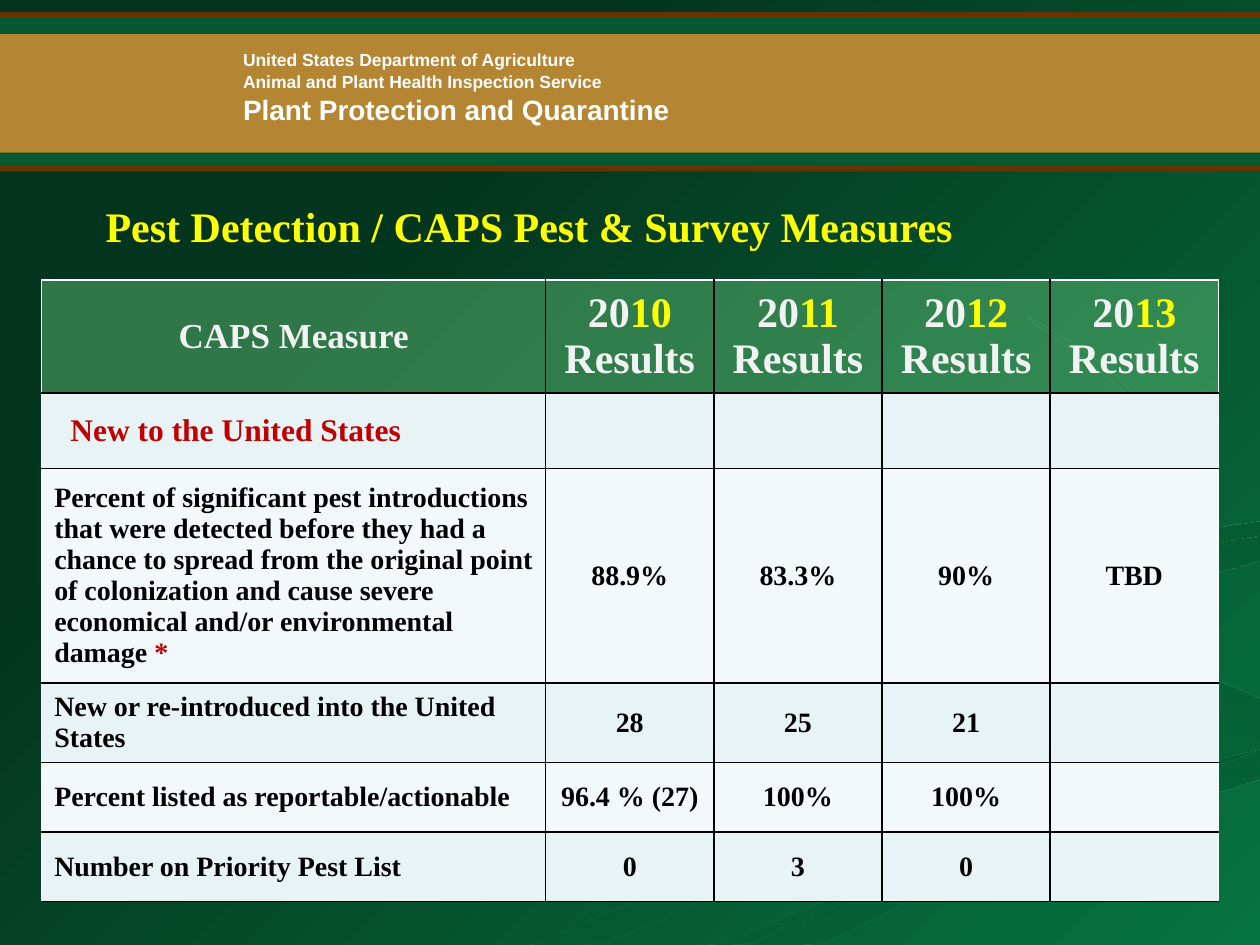
from lxml import etree
from pptx import Presentation
from pptx import util as u
from pptx.dml import color
from pptx.enum import shapes, text
from pptx.oxml import ns

Cm, Pt = u.Cm, u.Pt
GREEN, YELLOW, RED, BLACK, WHITE = "055730", "FFFF00", "C00000", "000000", "FFFFFF"
PALE = "F2F2F2"
CENTER = text.PP_ALIGN.CENTER

# Points that the background swirls curve through, in cm
SWIRLS = [
    [(20.9, 14.4), (17.7, 13.2), (16.6, 12.2), (17.8, 13.1), (20.9, 14.5),
     (17.5, 16.2), (10.9, 19), (12.2, 19), (17, 16.8), (21.2, 15.2)],
    [(24.2, 14.8), (21.9, 13.6), (19.7, 12.3), (21.6, 13.9), (23.7, 15.1), (23.2, 15.6)],
    [(15.2, 19), (16.6, 19), (20.3, 17.2), (25.4, 15.7), (25.4, 15.1), (20.5, 16.6)],
    [(19.7, 12.3), (24, 14.4), (22.2, 15.8), (14.6, 19), (15.2, 19), (20.5, 16.6),
     (25.4, 15.1), (25.4, 14.1), (20.9, 12.2), (25.4, 10.8), (25.4, 10.5), (20.7, 11.4)],
    [(20.9, 12.2), (21.8, 13), (21.5, 12.3), (25.4, 11.3), (25.4, 10.8), (21.5, 11.7)],
    [(19, 11.3), (23.1, 9.8), (22.8, 7.9), (20.7, 6.4), (23.2, 8.5), (22.3, 9.9),
     (17.5, 11.3), (17.7, 13), (17.1, 12)],
]

COLUMNS = [10.16] + [3.39] * 4
ROWS = [1.27, 1.52, 3.3] + [1.4] * 3
MEASURES = [
    ["New or re-introduced into the United States", "28", "25", "21", ""],
    ["Percent listed as reportable/actionable", "96.4 % (27)", "100%", "100%", ""],
    ["Number on Priority Pest List", "0", "3", "0", ""],
]
SPREAD = ("Percent of significant pest introductions that were detected before they had a "
          "chance to spread from the original point of colonization and cause severe "
          "economical and/or environmental damage ")


def rgb(value):
    return color.RGBColor.from_string(value)


def set_alpha(element, percents):
    """Give each colour below element its opacity, in order."""
    for clr, percent in zip(element.iter(ns.qn("a:srgbClr")), percents):
        etree.SubElement(clr, ns.qn("a:alpha"), val=str(percent * 1000))


def smooth(points, steps=6):
    """Return a closed Catmull-Rom curve through the points."""
    curve = []
    for i in range(len(points)):
        a, b, c, d = (points[(i + k) % len(points)] for k in range(-1, 3))
        for t in (step / steps for step in range(steps)):
            curve.append(tuple(
                q + t * ((r - p) + t * ((2 * p - 5 * q + 4 * r - s)
                                        + t * (3 * q - p - 3 * r + s))) / 2
                for p, q, r, s in zip(a, b, c, d)))
    return curve


def add_run(p, content, font="Times New Roman", size=16, fill=BLACK, bold=True):
    r = p.add_run()
    r.text = content
    r.font.name, r.font.size, r.font.bold = font, Pt(size), bold
    r.font.color.rgb = rgb(fill)


def set_gradient(fill, first, last, start, angle):
    fill.gradient()
    fill.gradient_angle = 360 - angle
    for stop, value, position in zip(fill.gradient_stops, (first, last), (start, 1)):
        stop.color.rgb, stop.position = rgb(value), position


class Deck:
    def __init__(self):
        self.prs = Presentation()
        self.prs.slide_width, self.prs.slide_height = Cm(25.4), Cm(19.05)
        self.s = self.prs.slides.add_slide(self.prs.slide_layouts[6])
        set_gradient(self.s.background.fill, "03341D", "077340", 0.26, 45)

    def band(self, top, height, fill, alpha=100):
        sp = self.s.shapes.add_shape(shapes.MSO_SHAPE.RECTANGLE, 0, Cm(top),
                                     Cm(25.4), Cm(height))
        sp.shadow.inherit = False
        sp.line.fill.background()
        sp.fill.solid()
        sp.fill.fore_color.rgb = rgb(fill)
        set_alpha(sp._element.spPr, [alpha])

    def rule(self, y):
        line = self.s.shapes.add_connector(shapes.MSO_CONNECTOR.STRAIGHT,
                                           0, Cm(y), Cm(25.4), Cm(y))
        line.line.color.rgb, line.line.width = rgb("663300"), Pt(3)
        etree.SubElement(line._element.spPr, ns.qn("a:effectLst"))

    def swirl(self, points):
        curve = [(Cm(min(x, 25.4)), Cm(min(y, 19.05))) for x, y in smooth(points)]
        builder = self.s.shapes.build_freeform(*curve[0])
        builder.add_line_segments(curve[1:], close=True)
        sp = builder.convert_to_shape()
        sp.shadow.inherit = False
        sp.line.fill.background()
        set_gradient(sp.fill, "035930", GREEN, 0, 90)
        set_alpha(sp._element.spPr, [59, 20])

    def textbox(self, left, top, width, height):
        tf = self.s.shapes.add_textbox(Cm(left), Cm(top), Cm(width), Cm(height)).text_frame
        tf.word_wrap = True
        return tf

    def table(self, left, top, height):
        frame = self.s.shapes.add_table(len(ROWS), len(COLUMNS), Cm(left), Cm(top),
                                        Cm(sum(COLUMNS)), Cm(height))
        for column, width in zip(frame.table.columns, COLUMNS):
            column.width = Cm(width)
        for row, row_height in zip(frame.table.rows, ROWS):
            row.height = Cm(row_height)
        frame.height = Cm(height)
        return frame.table

    def cell(self, cell, runs, fill, edges, alpha=100, align=None, size=16):
        """Fill one cell; edges are the left, right, top and bottom colours."""
        cell.vertical_anchor = text.MSO_ANCHOR.MIDDLE
        cell.fill.solid()
        cell.fill.fore_color.rgb = rgb(fill)
        tcPr = cell._tc.get_or_add_tcPr()
        set_alpha(tcPr, [alpha])
        for i, (side, value) in enumerate(zip("LRTB", edges)):
            ln = etree.Element(ns.qn(f"a:ln{side}"), w=str(Pt(1)))
            solid = etree.SubElement(ln, ns.qn("a:solidFill"))
            etree.SubElement(solid, ns.qn("a:srgbClr"), val=value)
            tcPr.insert(i, ln)
        p = cell.text_frame.paragraphs[0]
        p.alignment = align
        for content, value in runs:
            add_run(p, content, size=size, fill=value)


def main():
    deck = Deck()
    deck.band(0.28, 3.18, GREEN)
    deck.band(0.69, 2.39, "FF9933", alpha=70)

    tf = deck.textbox(4.65, 1.02, 11.43, 1.73)
    tf.auto_size = text.MSO_AUTO_SIZE.SHAPE_TO_FIT_TEXT
    agency = [("United States Department of Agriculture", 10),
              ("Animal and Plant Health Inspection Service", 10),
              ("Plant Protection and Quarantine", 16)]
    for i, (line, size) in enumerate(agency):
        p = tf.add_paragraph() if i else tf.paragraphs[0]
        p.line_spacing = 0.6
        p.space_before = Pt(size / 2 if i else 0)
        add_run(p, line, font="Arial", size=size, fill=WHITE)

    for y in (3.4, 0.3):
        deck.rule(y)
    for points in SWIRLS:
        deck.swirl(points)

    tf = deck.textbox(1.88, 3.81, 21.62, 1.6)
    tf.margin_top = Cm(0.23)
    add_run(tf.paragraphs[0], "Pest Detection / CAPS Pest & Survey Measures",
            size=24, fill=YELLOW)

    header = [[("CAPS Measure", PALE)]]
    header += [[("20", PALE), (f"{year} ", YELLOW), ("Results", PALE)]
               for year in range(10, 14)]
    rows = [header,
            [[("New to the United States", RED)], [], [], [], []],
            [[(SPREAD, BLACK), ("*", RED)]]
            + [[(value, BLACK)] for value in ("88.9%", "83.3%", "90%", "TBD")]]
    rows += [[[(value, BLACK)] if value else [] for value in row] for row in MEASURES]

    table = deck.table(0.84, 5.64, 12.01)
    last = len(COLUMNS) - 1
    for i, row in enumerate(rows):
        for j, runs in enumerate(row):
            edges = (BLACK if j else WHITE, WHITE if j == last else BLACK,
                     BLACK if i else WHITE, BLACK)
            align = CENTER if j or not i else None
            if i == 0:
                deck.cell(table.cell(i, j), runs, "64C47B", edges, alpha=46,
                          align=align, size=24 if j else 20)
            else:
                deck.cell(table.cell(i, j), runs, "E7F3F4" if i % 2 else "F3F9FA", edges,
                          align=align, size=18 if i == 1 else 16)
    table.cell(1, 0).margin_left = Cm(0.58)

    deck.prs.save("out.pptx")


if __name__ == "__main__":
    main()
